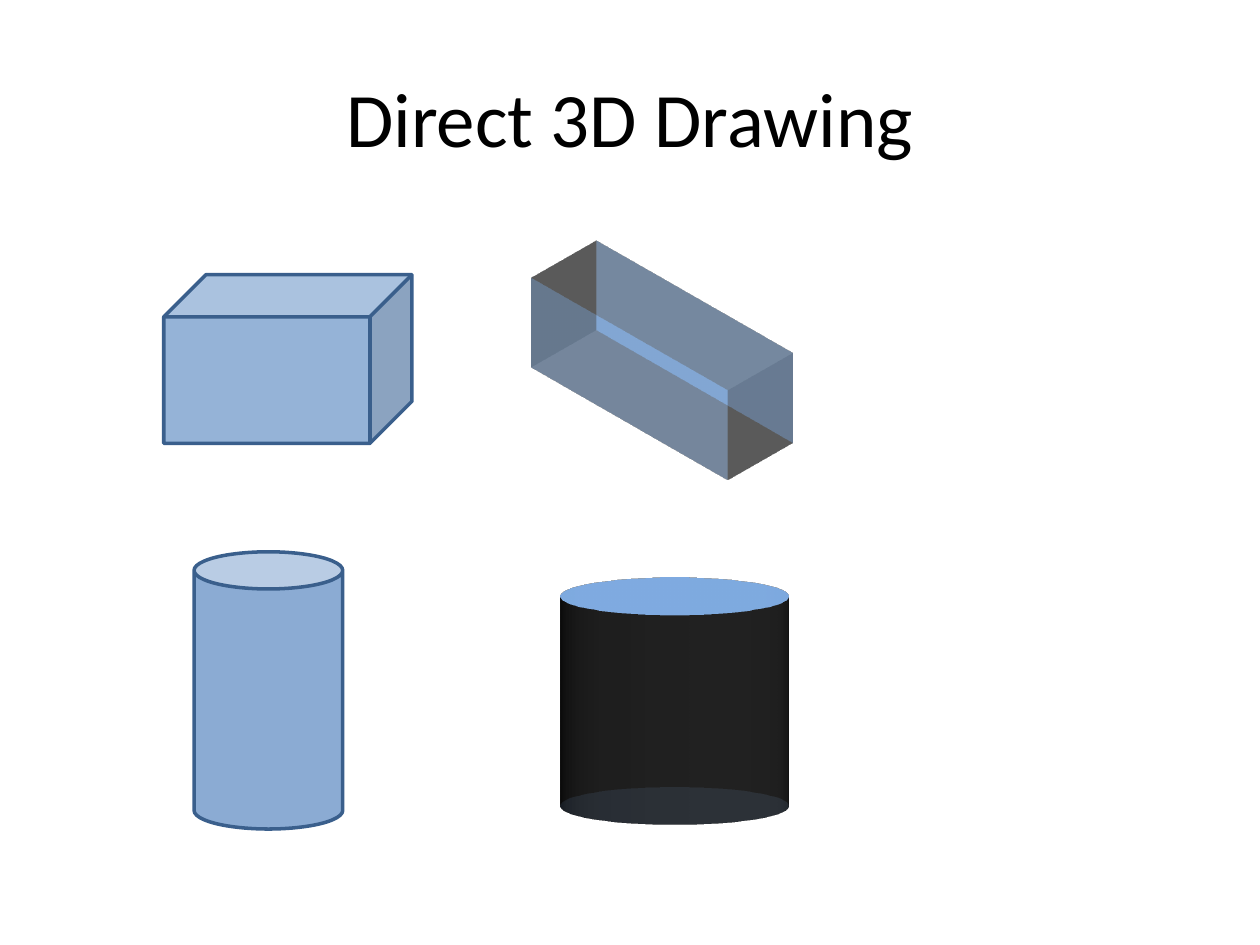
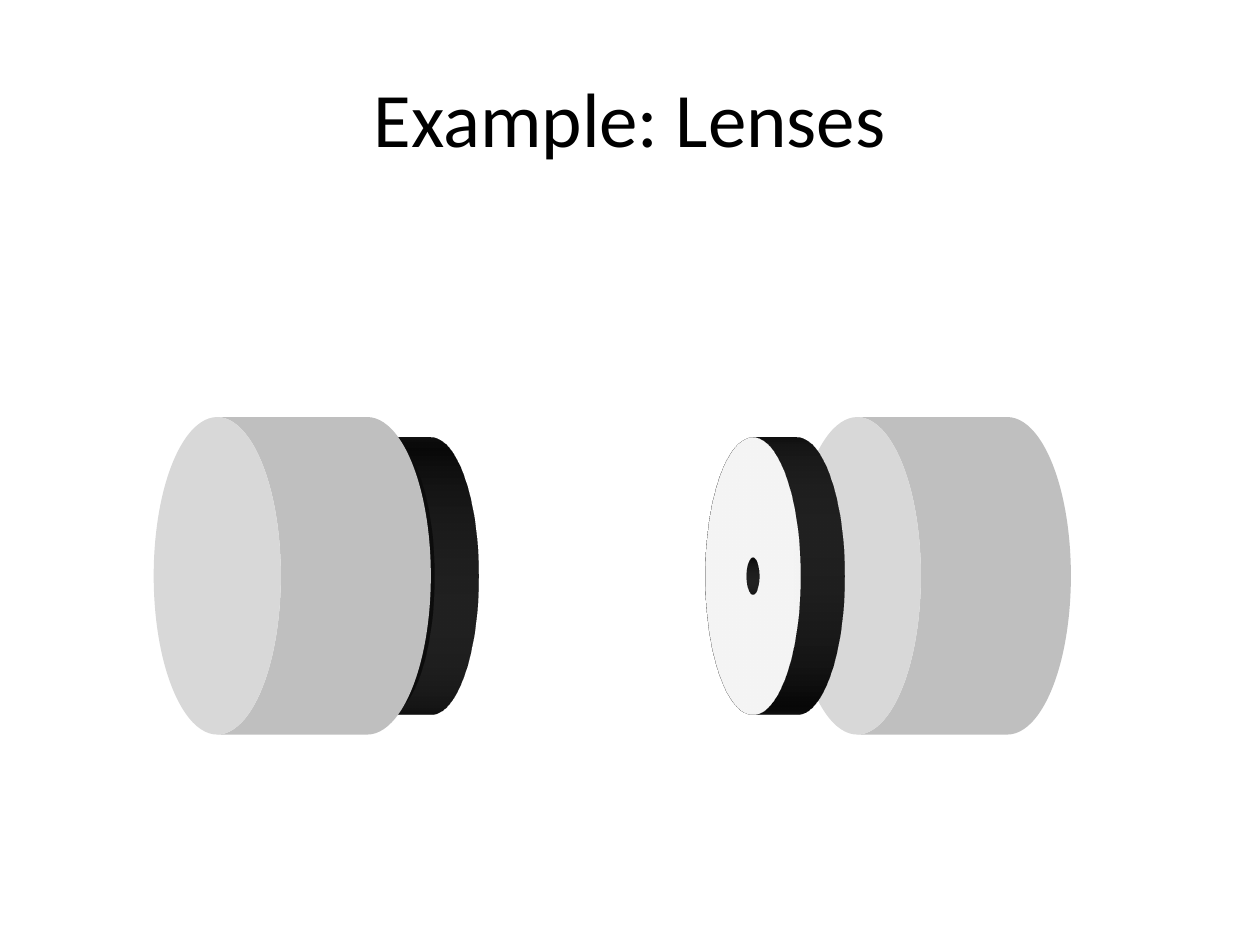
from dataclasses import dataclass

from lxml import etree
from pptx import Presentation
from pptx.dml.color import RGBColor
from pptx.enum.shapes import MSO_SHAPE
from pptx.enum.text import MSO_ANCHOR, PP_ALIGN
from pptx.oxml.ns import qn
from pptx.util import Inches, Pt

CAN, CUBE, DONUT = MSO_SHAPE.CAN, MSO_SHAPE.CUBE, MSO_SHAPE.DONUT
OVAL, RECTANGLE = MSO_SHAPE.OVAL, MSO_SHAPE.RECTANGLE
MIDDLE, CENTER = MSO_ANCHOR.MIDDLE, PP_ALIGN.CENTER
UNITS_PER_DEGREE = 60000


@dataclass(frozen=True)
class Theme:
    font: str = "Calibri"
    title_size: int = 44
    line_width: int = 2
    text: str = "000000"
    blue: str = "4F81BD"
    outline: str = "3A5F8C"
    lens: str = "BFBFBF"
    side: str = "404040"


class Deck:
    def __init__(self, theme):
        self.theme = theme
        self.presentation = Presentation()
        self.presentation.slide_width = Inches(10)
        self.presentation.slide_height = Inches(7.5)
        self.page = None

    def add_page(self, title):
        layout = self.presentation.slide_layouts[6]
        self.page = self.presentation.slides.add_slide(layout)
        box = self.page.shapes.add_textbox(
            Inches(0.5), Inches(0.3), Inches(9), Inches(1.25))
        frame = box.text_frame
        frame.word_wrap = True
        frame.vertical_anchor = MIDDLE
        para = frame.paragraphs[0]
        para.text = title
        para.alignment = CENTER
        para.font.name = self.theme.font
        para.font.size = Pt(self.theme.title_size)
        para.font.color.rgb = RGBColor.from_string(self.theme.text)

    def solid(self, kind, left, top, width, height, fill,
              opacity=100, line=None, adjust=None, rotation=0):
        shape = self.page.shapes.add_shape(
            kind, Inches(left), Inches(top), Inches(width), Inches(height))
        if adjust is not None:
            shape.adjustments[0] = adjust
        shape.rotation = rotation
        shape.shadow.inherit = False
        shape.fill.solid()
        shape.fill.fore_color.rgb = RGBColor.from_string(fill)
        if opacity < 100:
            color = shape.element.spPr.find(
                f"{qn('a:solidFill')}/{qn('a:srgbClr')}")
            etree.SubElement(color, qn("a:alpha"), val=str(opacity * 1000))
        if line:
            shape.line.color.rgb = RGBColor.from_string(line)
            shape.line.width = Pt(self.theme.line_width)
        else:
            shape.line.fill.background()
        return shape

    def blue_solid(self, kind, left, top, width, height, opacity):
        return self.solid(kind, left, top, width, height, self.theme.blue,
                          opacity=opacity, line=self.theme.outline)

    def extrude(self, shape, depth, latitude, longitude=0,
                camera="orthographicFront"):
        """Give a flat shape depth, seen by a camera turned in degrees."""
        properties = shape.element.spPr
        scene = etree.SubElement(properties, qn("a:scene3d"))
        view = etree.SubElement(scene, qn("a:camera"), prst=camera)
        etree.SubElement(view, qn("a:rot"),
                         lat=str(latitude * UNITS_PER_DEGREE),
                         lon=str(longitude * UNITS_PER_DEGREE), rev="0")
        etree.SubElement(scene, qn("a:lightRig"), rig="threePt", dir="t")
        body = etree.SubElement(properties, qn("a:sp3d"),
                                extrusionH=str(Inches(depth)))
        side = etree.SubElement(body, qn("a:extrusionClr"))
        etree.SubElement(side, qn("a:srgbClr"), val=self.theme.side)

    def lens(self, left):
        self.solid(CAN, left, 3.47, 2.52, 2.2, self.theme.lens,
                   adjust=0.459, rotation=270)

    def mount(self, left, rotation, latitude):
        """Draw a thick disc with a pinhole, turned on its edge."""
        disc = self.solid(DONUT, left, 3.47, 2.2, 2.2, self.theme.lens,
                          adjust=0.433, rotation=rotation)
        self.extrude(disc, 0.37, latitude)


def drawing_page(deck):
    deck.add_page("Direct 3D Drawing")
    deck.blue_solid(CUBE, 1.3, 2.18, 1.97, 1.34, opacity=60)
    box = deck.blue_solid(RECTANGLE, 3.9, 2.57, 2.2, 0.87, opacity=49)
    deck.extrude(box, 0.73, latitude=35, longitude=45,
                 camera="isometricLeftDown")
    deck.blue_solid(CAN, 1.54, 4.38, 1.18, 2.2, opacity=66)
    cylinder = deck.blue_solid(OVAL, 4.45, 4.38, 1.81, 0.71, opacity=68)
    deck.extrude(cylinder, 1.83, latitude=295)


def lenses_page(deck):
    deck.add_page("Example: Lenses")
    deck.lens(6.14)
    deck.mount(4.88, rotation=270, latitude=290)
    deck.mount(2.32, rotation=90, latitude=250)
    deck.lens(1.06)


def main():
    deck = Deck(Theme())
    drawing_page(deck)
    lenses_page(deck)
    deck.presentation.save("out.pptx")


if __name__ == "__main__":
    main()
